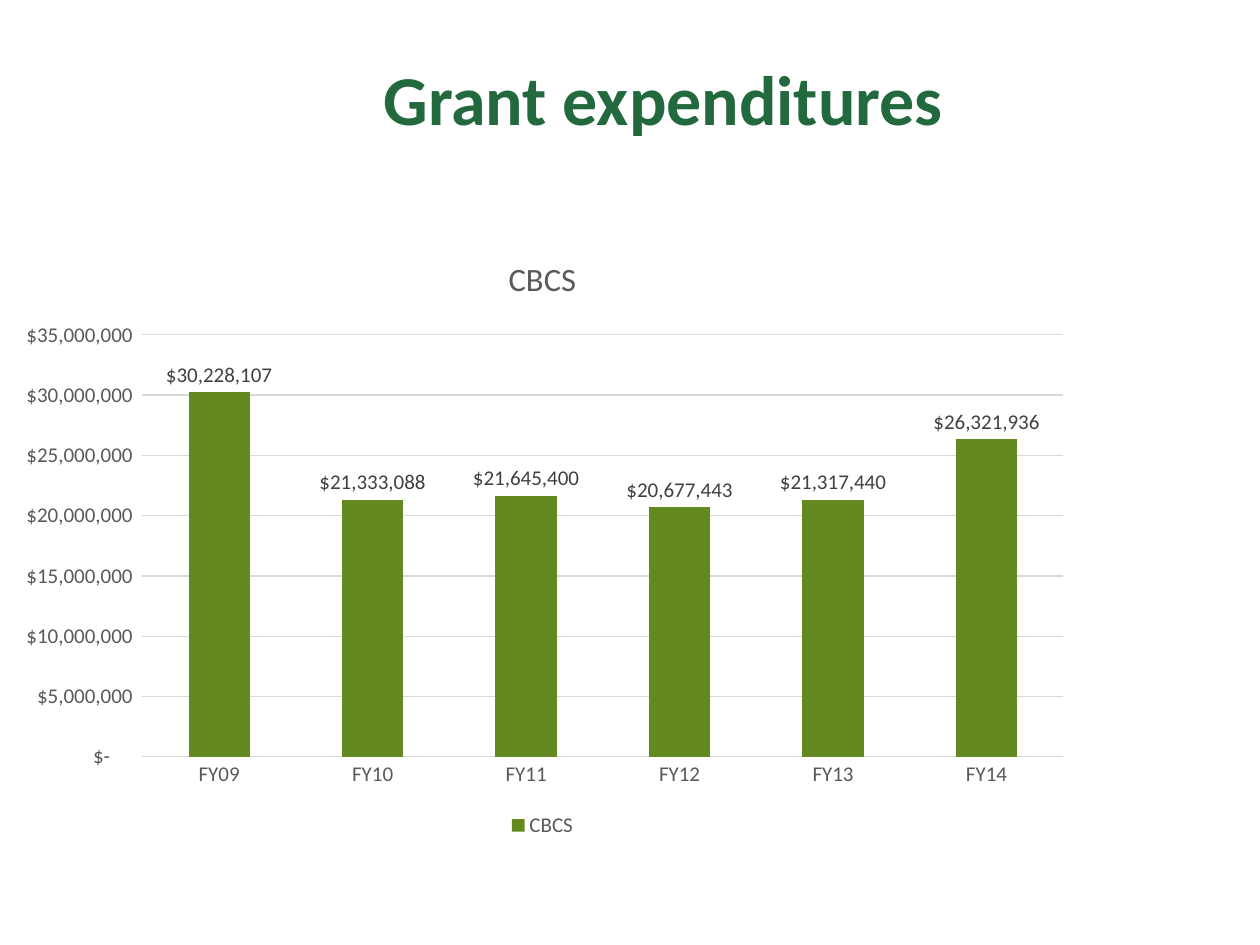
"""Build a slide with a column chart of grant expenditures by fiscal year."""
from dataclasses import dataclass
from typing import Any

import pptx
import pptx.chart.data
import pptx.dml.color
import pptx.enum.chart
import pptx.enum.text
import pptx.util

PX = 914400 // 126
CURRENCY = '_("$"* #,##0_);_("$"* \\(#,##0\\);_("$"* "-"??_);_(@_)'


@dataclass(frozen=True)
class Theme:
    font: str = "Calibri"
    heading: str = "22693E"
    column: str = "63891F"
    muted: str = "595959"
    label: str = "404040"
    grid: str = "D9D9D9"
    heading_size: float = 40
    chart_title_size: float = 18.6
    chart_size: float = 12


@dataclass(frozen=True)
class Frame:
    left: int
    top: int
    width: int
    height: int

    def emu(self) -> tuple[int, ...]:
        return tuple(n * PX for n in (self.left, self.top, self.width, self.height))


@dataclass(frozen=True)
class Spending:
    year: str
    dollars: int


THEME = Theme()
TITLE_FRAME = Frame(63, 38, 1134, 157)
CHART_FRAME = Frame(0, 231, 1085, 612)
UNIT = "CBCS"
SPENDING = [
    Spending("FY09", 30228107),
    Spending("FY10", 21333088),
    Spending("FY11", 21645400),
    Spending("FY12", 20677443),
    Spending("FY13", 21317440),
    Spending("FY14", 26321936),
]


def apply(target: Any, values: dict[str, Any]) -> None:
    for name, value in values.items():
        setattr(target, name, value)


def style_font(font: Any, size: float, color: str, bold: bool = False) -> None:
    apply(font, {"name": THEME.font, "size": pptx.util.Pt(size), "bold": bold})
    font.color.rgb = pptx.dml.color.RGBColor.from_string(color)


def add_title(page: Any, text: str, frame: Frame) -> None:
    box = page.shapes.add_textbox(*frame.emu())
    apply(box.text_frame, {
        "word_wrap": True,
        "vertical_anchor": pptx.enum.text.MSO_ANCHOR.MIDDLE,
        "margin_left": 79 * PX,
        "margin_bottom": 44 * PX,
    })
    para = box.text_frame.paragraphs[0]
    para.alignment = pptx.enum.text.PP_ALIGN.CENTER
    span = para.add_run()
    span.text = text
    style_font(span.font, THEME.heading_size, THEME.heading, True)


def style_axes(chart: Any) -> None:
    no_tick = pptx.enum.chart.XL_TICK_MARK.NONE
    for axis in (chart.category_axis, chart.value_axis):
        apply(axis, {"major_tick_mark": no_tick, "minor_tick_mark": no_tick})
        style_font(axis.tick_labels.font, THEME.chart_size, THEME.muted)
        axis.format.line.fill.background()
    values = chart.value_axis
    apply(values, {"minimum_scale": 0, "maximum_scale": 35000000, "major_unit": 5000000})
    apply(values.tick_labels, {"number_format": CURRENCY, "number_format_is_linked": False})
    grid = values.major_gridlines.format.line
    grid.width = pptx.util.Pt(0.75)
    grid.color.rgb = pptx.dml.color.RGBColor.from_string(THEME.grid)


def style_columns(plot: Any) -> None:
    apply(plot, {"gap_width": 150, "vary_by_categories": False})
    fill = plot.series[0].format.fill
    fill.solid()
    fill.fore_color.rgb = pptx.dml.color.RGBColor.from_string(THEME.column)
    labels = plot.series[0].data_labels
    apply(labels, {
        "show_value": True,
        "number_format": CURRENCY,
        "number_format_is_linked": False,
        "position": pptx.enum.chart.XL_LABEL_POSITION.OUTSIDE_END,
    })
    style_font(labels.font, THEME.chart_size, THEME.label)


def add_spending_chart(page: Any, spending: list[Spending], frame: Frame) -> None:
    data = pptx.chart.data.CategoryChartData(number_format=CURRENCY)
    data.categories = [entry.year for entry in spending]
    data.add_series(UNIT, [entry.dollars for entry in spending])
    kind = pptx.enum.chart.XL_CHART_TYPE.COLUMN_CLUSTERED
    chart = page.shapes.add_chart(kind, *frame.emu(), data).chart
    apply(chart, {"has_title": True, "has_legend": True})
    style_font(chart.font, THEME.chart_size, THEME.muted)
    span = chart.chart_title.text_frame.paragraphs[0].add_run()
    span.text = UNIT
    style_font(span.font, THEME.chart_title_size, THEME.muted)
    chart.chart_title.include_in_layout = False
    apply(chart.legend, {
        "position": pptx.enum.chart.XL_LEGEND_POSITION.BOTTOM,
        "include_in_layout": False,
    })
    style_font(chart.legend.font, THEME.chart_size, THEME.muted)
    style_axes(chart)
    style_columns(chart.plots[0])


def main() -> None:
    deck = pptx.Presentation()
    apply(deck, {"slide_width": 1260 * PX, "slide_height": 945 * PX})
    page = deck.slides.add_slide(deck.slide_layouts[6])
    add_title(page, "Grant expenditures", TITLE_FRAME)
    add_spending_chart(page, SPENDING, CHART_FRAME)
    deck.save("out.pptx")


if __name__ == "__main__":
    main()
